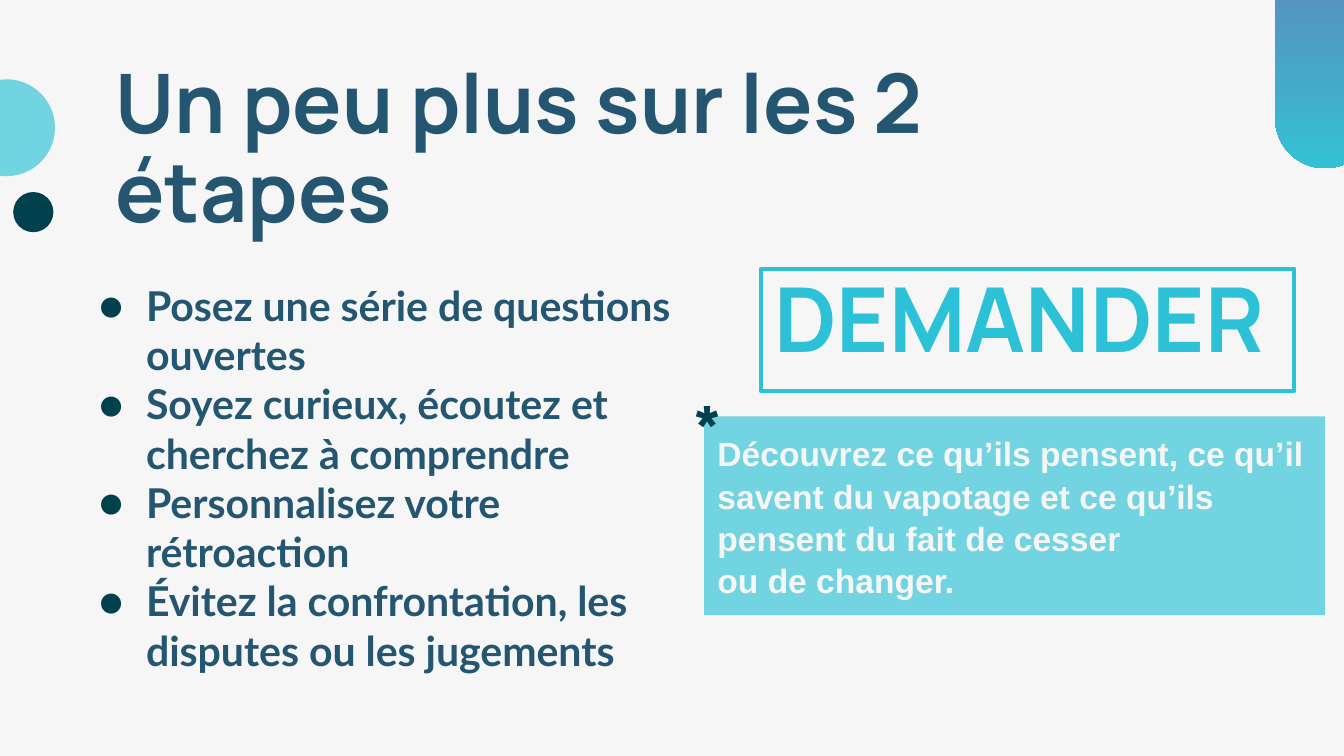
from lxml.etree import SubElement
from pptx import Presentation
from pptx.dml.color import RGBColor
from pptx.enum.shapes import MSO_SHAPE as Shape
from pptx.enum.text import MSO_ANCHOR as Anchor, MSO_AUTO_SIZE as AutoSize, PP_ALIGN as Align
from pptx.oxml import parse_xml
from pptx.oxml.ns import nsdecls, qn
from pptx.util import Cm, Pt

PAPER = RGBColor(0xF6, 0xF6, 0xF6)
NAVY = RGBColor(0x24, 0x56, 0x71)
DARK_TEAL = RGBColor(0x00, 0x41, 0x4D)
TURQUOISE = RGBColor(0x2C, 0xC1, 0xD6)
PALE_TURQUOISE = RGBColor(0x72, 0xD3, 0xE1)
# Gradient stops from top to bottom: position in percent, colour
TAB_STOPS = [
    (0, RGBColor(0x75, 0x6D, 0xAF)),
    (20, RGBColor(0x5D, 0x87, 0xBC)),
    (100, RGBColor(0x34, 0xC1, 0xD6)),
]

TITLE = "Un peu plus sur les 2 étapes"
ADVICE = [
    "Posez une série de questions ouvertes",
    "Soyez curieux, écoutez et cherchez à comprendre",
    "Personnalisez votre rétroaction",
    "Évitez la confrontation, les disputes ou les jugements",
]
EXPLANATION = [
    "Découvrez ce qu’ils pensent, ce qu’il savent du vapotage "
    "et ce qu’ils pensent du fait de cesser ",
    "ou de changer.",
]


def add_plain_shape(slide, kind, box, fill=None):
    """Add a preset shape without shadow or outline."""
    shape = slide.shapes.add_shape(kind, *map(Cm, box))
    shape.shadow.inherit = False
    shape.line.fill.background()
    if fill is None:
        shape.fill.background()
    else:
        shape.fill.solid()
        shape.fill.fore_color.rgb = fill
    return shape


def set_opacity(shape, percent):
    colour = shape.fill._xPr.find(".//" + qn("a:srgbClr"))
    SubElement(colour, qn("a:alpha"), val=str(percent * 1000))


def set_vertical_gradient(shape, stops):
    stop_list = "".join(
        f'<a:gs pos="{position * 1000}"><a:srgbClr val="{colour}"/></a:gs>'
        for position, colour in stops
    )
    gradient = parse_xml(
        f'<a:gradFill {nsdecls("a")}><a:gsLst>{stop_list}</a:gsLst>'
        '<a:lin ang="5400000" scaled="0"/></a:gradFill>'
    )
    properties = shape._element.spPr
    properties.replace(properties.find(qn("a:noFill")), gradient)


def set_frame(shape, anchor=Anchor.TOP, inset=None):
    frame = shape.text_frame
    frame.word_wrap = True
    frame.auto_size = AutoSize.NONE
    frame.vertical_anchor = anchor
    if inset is not None:
        frame.margin_left = frame.margin_right = Cm(inset)
        frame.margin_top = frame.margin_bottom = Cm(inset)
    return frame


def write_paragraph(paragraph, lines, font, size, colour, spacing=1.0):
    """Write bold, left-aligned text, with a line break between lines."""
    paragraph.alignment = Align.LEFT
    paragraph.line_spacing = spacing
    paragraph.space_before = paragraph.space_after = Pt(0)
    for index, line in enumerate(lines):
        if index:
            paragraph.add_line_break()
        run = paragraph.add_run()
        run.text = line
        run.font.name = font
        run.font.size = Pt(size)
        run.font.bold = True
        run.font.color.rgb = colour


def set_bullet(paragraph):
    properties = paragraph._p.get_or_add_pPr()
    properties.set("marL", str(Cm(1.27)))
    properties.set("indent", str(Cm(-0.89)))
    colour = SubElement(properties, qn("a:buClr"))
    SubElement(colour, qn("a:srgbClr"), val=str(DARK_TEAL))
    SubElement(properties, qn("a:buFont"), typeface="Lato")
    SubElement(properties, qn("a:buChar"), char="●")


def place(shape, box):
    shape.left, shape.top, shape.width, shape.height = map(Cm, box)


def add_decoration(slide):
    add_plain_shape(slide, Shape.OVAL, (0.25, 3.63, 0.76, 0.76), DARK_TEAL)
    tab = add_plain_shape(slide, Shape.ROUNDED_RECTANGLE, (24.1, -1.9, 1.88, 5.08))
    tab.adjustments[0] = 0.5
    set_vertical_gradient(tab, TAB_STOPS)
    large_dot = add_plain_shape(slide, Shape.OVAL, (-0.79, 1.5, 1.83, 1.83), TURQUOISE)
    set_opacity(large_dot, 65)


def fill_title(slide):
    title = slide.shapes.title
    place(title, (1.93, 0.94, 20.07, 2.74))
    frame = set_frame(title, inset=0.25)
    write_paragraph(frame.paragraphs[0], [TITLE], "Manrope", 44, NAVY, 0.9)


def fill_advice(slide):
    body = slide.placeholders[1]
    place(body, (1.24, 5.05, 12.32, 8.28))
    frame = set_frame(body, inset=0.25)
    for index, item in enumerate(ADVICE):
        paragraph = frame.add_paragraph() if index else frame.paragraphs[0]
        write_paragraph(paragraph, [item], "Lato", 22, NAVY)
        set_bullet(paragraph)


def add_explanation(slide):
    panel = add_plain_shape(slide, Shape.RECTANGLE, (13.31, 7.87, 11.73, 3.76), PALE_TURQUOISE)
    frame = set_frame(panel, Anchor.MIDDLE)
    write_paragraph(frame.paragraphs[0], EXPLANATION, "Arial", 18, PAPER, 1.05)
    asterisk = slide.shapes.add_textbox(*map(Cm, (12.88, 7.39, 0.89, 1.63)))
    frame = set_frame(asterisk)
    write_paragraph(frame.paragraphs[0], ["*"], "Manrope", 32, DARK_TEAL, 0.9)


def add_step_label(slide):
    label = add_plain_shape(slide, Shape.RECTANGLE, (14.38, 5.08, 10.08, 2.31))
    label.line.color.rgb = TURQUOISE
    label.line.width = Pt(2.25)
    frame = set_frame(label)
    write_paragraph(frame.paragraphs[0], ["DEMANDER"], "Manrope", 48, TURQUOISE, 0.9)


def main():
    presentation = Presentation()
    presentation.slide_width, presentation.slide_height = Cm(25.4), Cm(14.29)
    slide = presentation.slides.add_slide(presentation.slide_layouts[1])
    slide.background.fill.solid()
    slide.background.fill.fore_color.rgb = PAPER

    add_decoration(slide)
    # Left side: heading and advice
    fill_title(slide)
    fill_advice(slide)
    # Right side: the step and what it means
    add_explanation(slide)
    add_step_label(slide)
    presentation.save("out.pptx")


if __name__ == "__main__":
    main()
